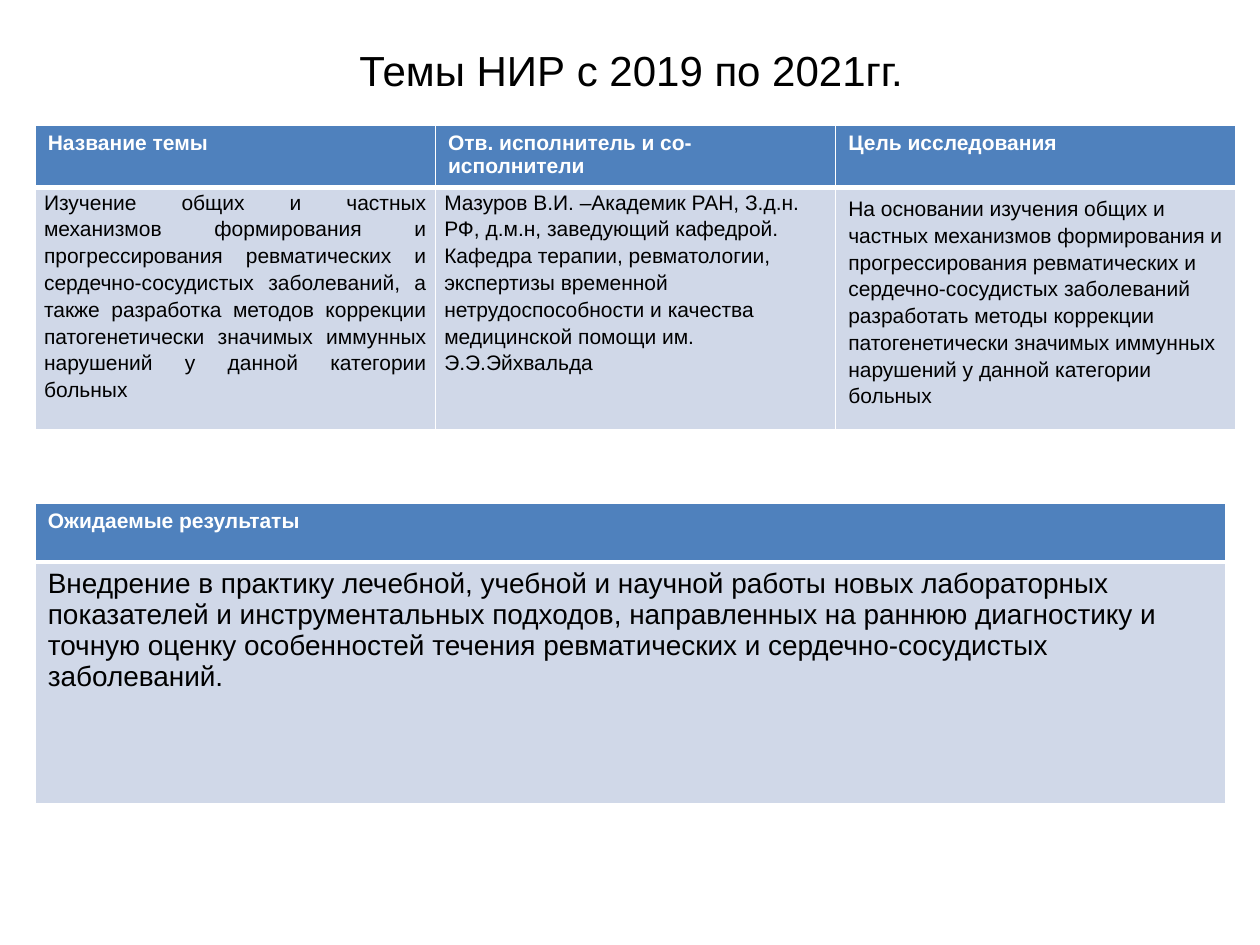
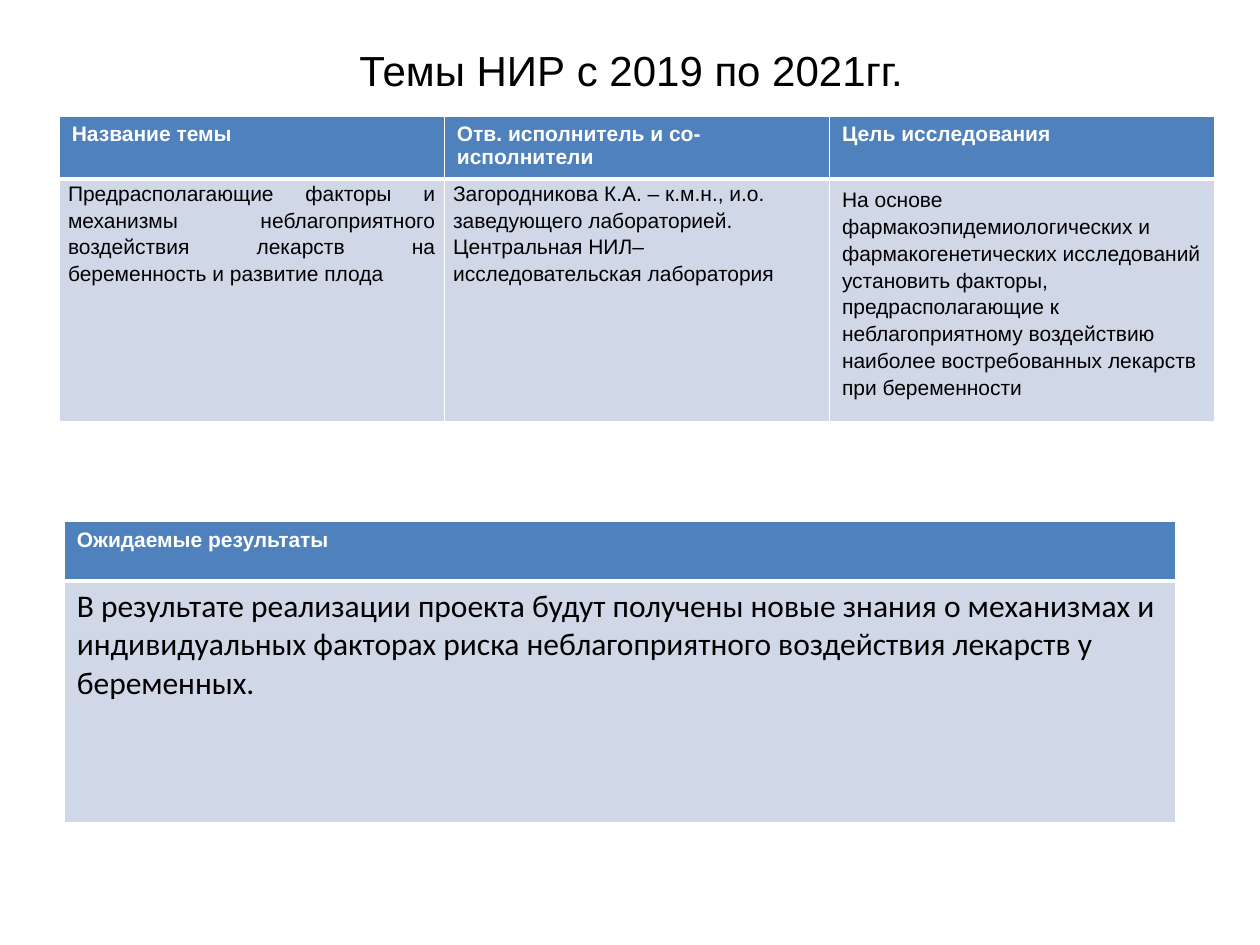
from dataclasses import dataclass

from lxml import etree
from pptx import Presentation
from pptx.dml import color
from pptx.enum import text
from pptx.oxml import ns
from pptx.util import Inches, Pt


@dataclass(frozen=True)
class Theme:
    white: str = "FFFFFF"
    black: str = "000000"
    header_fill: str = "4F81BD"
    body_fill: str = "D0D8E8"
    font: str = "Arial"
    title_size: int = 24
    table_size: int = 12
    thin_line: float = 1
    thick_line: float = 3


THEME = Theme()
TITLE = "Темы НИР с 2019 по 2021гг."
TITLE_BOX = (0.51, 0.13, 9, 0.85)
TOPIC_HEADERS = ["Название темы", "Отв. исполнитель и со- исполнители", "Цель исследования"]
RESULT_HEADERS = ["Ожидаемые результаты"]
TOPIC_ROWS = (0.47, 1.8)
RESULT_ROWS = (0.47, 1.92)

# Formats of the body cells, column by column
TIGHT = {"margin_left": Inches(0.07), "margin_right": Inches(0.07),
         "margin_top": 0, "margin_bottom": 0}
SPACED = {"line_spacing": 1.14}
TOPIC_FORMATS = [
    {"cell": TIGHT, "paragraph": {**SPACED, "alignment": text.PP_ALIGN.JUSTIFY}},
    {"cell": TIGHT, "paragraph": SPACED},
    {"paragraph": SPACED},
]

PAGES = [
    {
        "topic_box": (0.28, 0.99, 9.53),
        "topic": [
            "Изучение общих и частных механизмов формирования и прогрессирования "
            "ревматических и сердечно-сосудистых заболеваний, а также разработка методов "
            "коррекции патогенетически значимых иммунных нарушений у данной категории больных",
            "Мазуров В.И. –Академик РАН, З.д.н. РФ, д.м.н, заведующий кафедрой. "
            "Кафедра терапии, ревматологии, экспертизы временной нетрудоспособности "
            "и качества медицинской помощи им. Э.Э.Эйхвальда",
            "На основании изучения общих и частных механизмов формирования и "
            "прогрессирования ревматических и сердечно-сосудистых заболеваний разработать "
            "методы коррекции патогенетически значимых иммунных нарушений у данной "
            "категории больных",
        ],
        "result_box": (0.28, 3.99, 9.45),
        "result": "Внедрение в практику лечебной, учебной и научной работы новых лабораторных "
                  "показателей и инструментальных подходов, направленных на раннюю диагностику "
                  "и точную оценку особенностей течения ревматических и сердечно-сосудистых "
                  "заболеваний.",
        "result_font": {"size": Pt(16)},
    },
    {
        "topic_box": (0.47, 0.92, 9.17),
        "topic": [
            "Предрасполагающие факторы и механизмы неблагоприятного воздействия лекарств "
            "на беременность и развитие плода",
            "Загородникова К.А. – к.м.н., и.о. заведующего лабораторией. "
            "Центральная НИЛ– исследовательская лаборатория",
            "На основе фармакоэпидемиологических и фармакогенетических исследований "
            "установить факторы, предрасполагающие к неблагоприятному воздействию "
            "наиболее востребованных лекарств при беременности",
        ],
        "result_box": (0.51, 4.14, 8.82),
        "result": "В результате реализации проекта будут получены новые знания о механизмах и "
                  "индивидуальных факторах риска неблагоприятного воздействия лекарств "
                  "у беременных.",
        "result_font": {"size": Pt(18), "name": "Calibri"},
    },
]


def set_format(target, values):
    for name, value in values.items():
        setattr(target, name, value)


def write(frame, content, font, paragraph_format):
    paragraph = frame.paragraphs[0]
    set_format(paragraph, paragraph_format)
    run = paragraph.add_run()
    run.text = content
    values = {"name": THEME.font, "size": Pt(THEME.table_size), "bold": False, **font}
    ink = values.pop("color", THEME.black)
    set_format(run.font, values)
    run.font.color.rgb = color.RGBColor.from_string(ink)


def set_borders(cell, widths):
    properties = cell._tc.get_or_add_tcPr()
    for side, width in zip("LRTB", widths):
        line = etree.SubElement(properties, ns.qn(f"a:ln{side}"), w=str(Pt(width)))
        fill = etree.SubElement(line, ns.qn("a:solidFill"))
        etree.SubElement(fill, ns.qn("a:srgbClr"), val=THEME.white)


def fill_cell(cell, content, fill, borders, font, cell_format, paragraph_format):
    set_borders(cell, borders)
    cell.fill.solid()
    cell.fill.fore_color.rgb = color.RGBColor.from_string(fill)
    set_format(cell, cell_format)
    write(cell.text_frame, content, font, paragraph_format)


def add_title(slide, box):
    shape = slide.shapes.add_textbox(*map(Inches, box))
    set_format(shape.text_frame, {"word_wrap": True,
                                  "vertical_anchor": text.MSO_ANCHOR.MIDDLE})
    write(shape.text_frame, TITLE, {"size": Pt(THEME.title_size)},
          {"alignment": text.PP_ALIGN.CENTER})


def add_header_table(slide, box, row_heights, headers, bodies, formats):
    """A blue header row over one pale body row, in columns of equal width."""
    left, top, width = box
    shape = slide.shapes.add_table(2, len(headers), Inches(left), Inches(top),
                                   Inches(width), Inches(sum(row_heights)))
    table = shape.table
    set_format(table, {"first_row": False, "horz_banding": False})
    for row, height in zip(table.rows, row_heights):
        row.height = Inches(height)

    thin, thick = THEME.thin_line, THEME.thick_line
    header_font = {"bold": True, "color": THEME.white}
    for index, (header, body, style) in enumerate(zip(headers, bodies, formats)):
        table.columns[index].width = Inches(width / len(headers))
        fill_cell(table.cell(0, index), header, THEME.header_fill,
                  (thin, thin, thin, thick), header_font, {}, {})
        fill_cell(table.cell(1, index), body, THEME.body_fill,
                  (thin, thin, thick, thin), style.get("font", {}),
                  style.get("cell", {}), style.get("paragraph", {}))


def add_topic_slide(presentation, page):
    slide = presentation.slides.add_slide(presentation.slide_layouts[6])
    add_title(slide, TITLE_BOX)
    # Topic, people and aim
    add_header_table(slide, page["topic_box"], TOPIC_ROWS, TOPIC_HEADERS,
                     page["topic"], TOPIC_FORMATS)
    # Expected results
    add_header_table(slide, page["result_box"], RESULT_ROWS, RESULT_HEADERS,
                     [page["result"]], [{"font": page["result_font"]}])


def main():
    presentation = Presentation()
    set_format(presentation, {"slide_width": Inches(10), "slide_height": Inches(7.5)})
    for page in PAGES:
        add_topic_slide(presentation, page)
    presentation.save("out.pptx")


if __name__ == "__main__":
    main()
